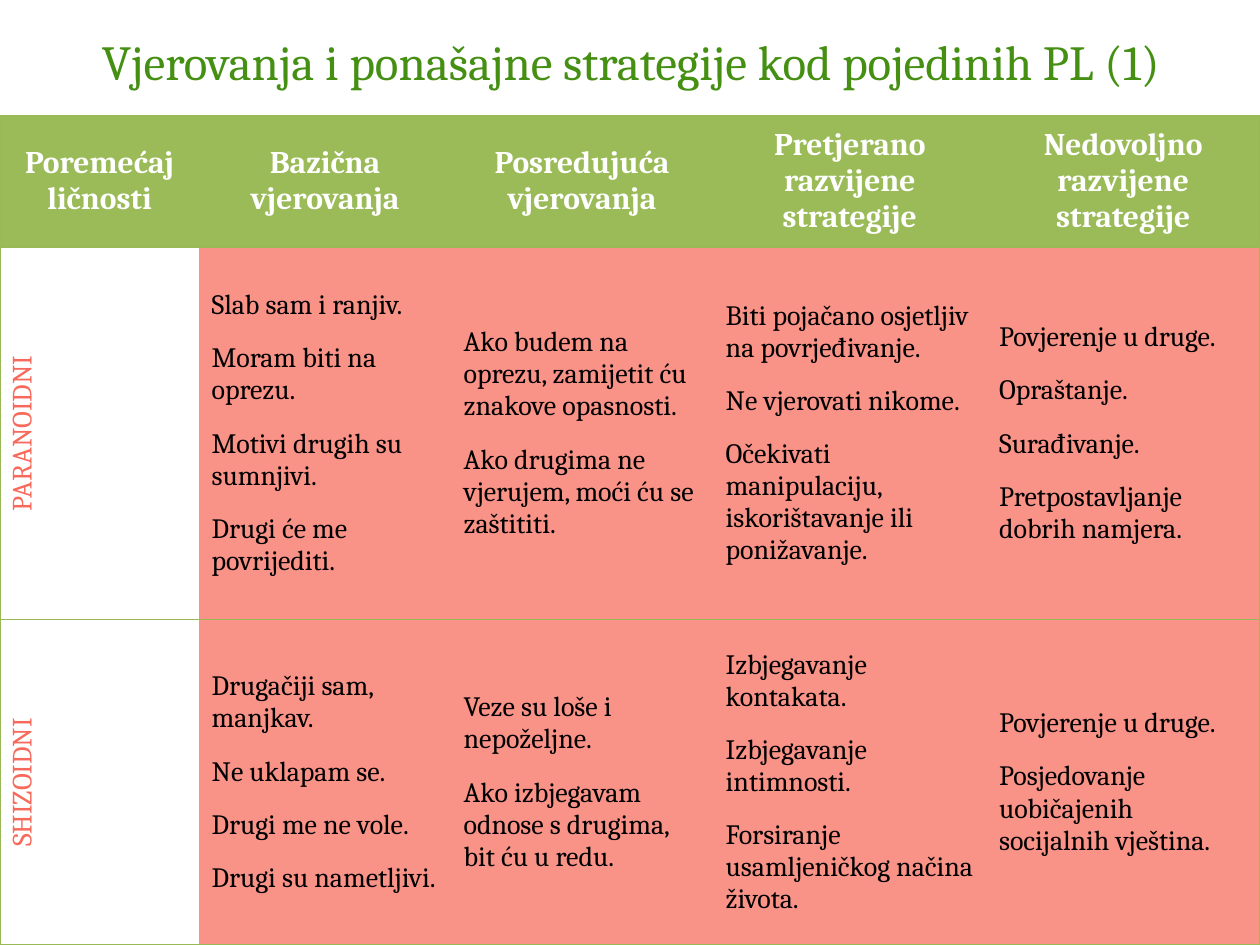
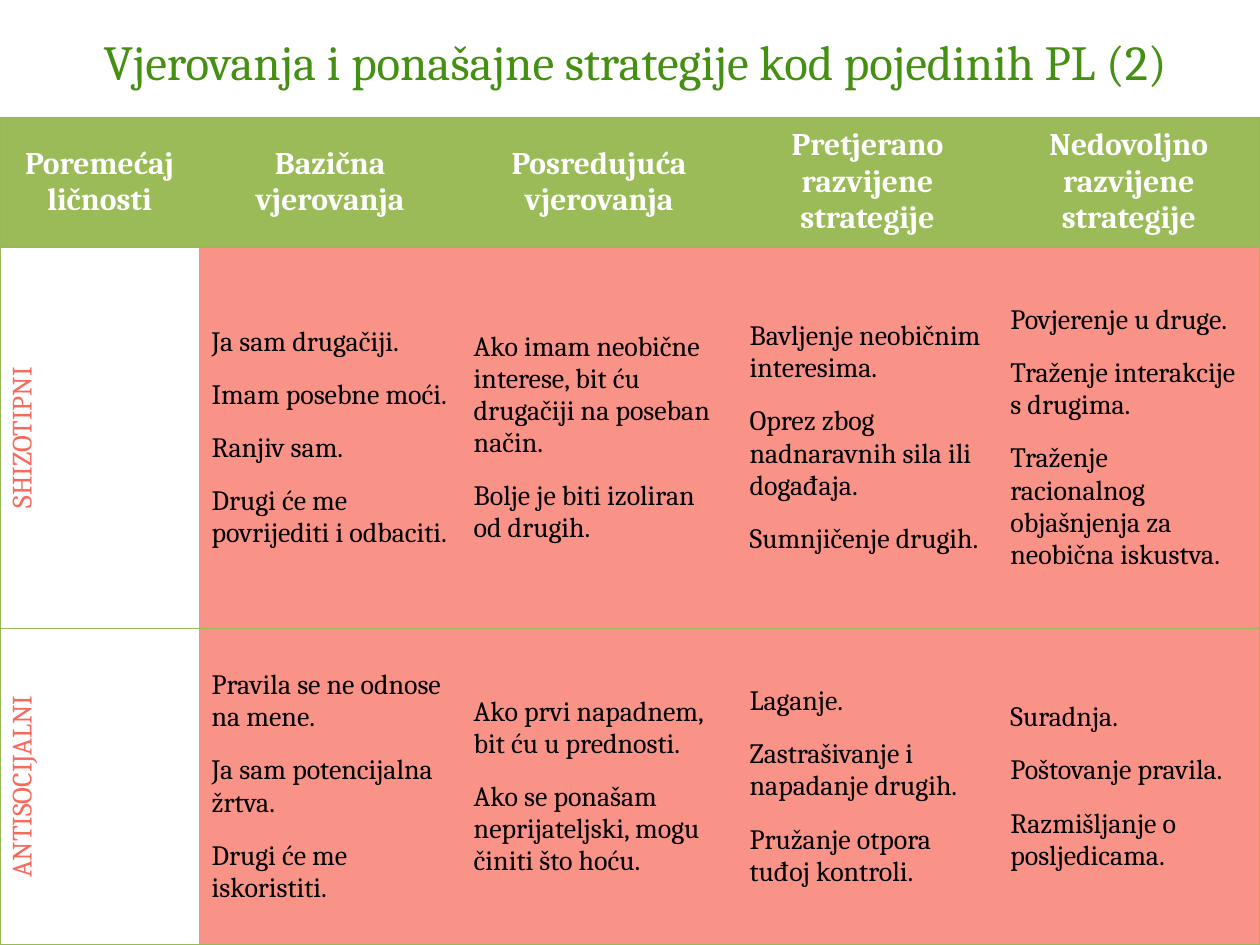
from lxml.etree import SubElement
from pptx import Presentation
from pptx.dml.color import RGBColor
from pptx.enum.text import MSO_ANCHOR, PP_ALIGN
from pptx.oxml.ns import qn
from pptx.util import Inches, Pt

COLORS = {
    "title": "458F13",
    "header": "9BBB59",
    "header text": "FFFFFF",
    "border": "98B955",
    "disorder": "F76A5B",
    "body": "F99287",
    "body text": "000000",
}
FONT = "Cambria"
TITLE = "Vjerovanja i ponašajne strategije kod pojedinih PL ({})"
HEADERS = [
    "Poremećaj ličnosti",
    "Bazična vjerovanja",
    "Posredujuća vjerovanja",
    "Pretjerano razvijene strategije",
    "Nedovoljno razvijene strategije",
]

SLIDES = [
    {
        "title left": 0.17,
        "title width": 9.67,
        "columns": [1.58, 2, 2.08, 2.17, 2.17],
        "rows": [1.04, 2.96, 2.58],
        "disorders": {
            "PARANOIDNI": [
                ["Slab sam i ranjiv.", "Moram biti na oprezu.",
                 "Motivi drugih su sumnjivi.", "Drugi će me povrijediti."],
                ["Ako budem na oprezu, zamijetit ću znakove opasnosti.",
                 "Ako drugima ne vjerujem, moći ću se zaštititi."],
                ["Biti pojačano osjetljiv na povrjeđivanje.", "Ne vjerovati nikome.",
                 "Očekivati manipulaciju, iskorištavanje ili ponižavanje."],
                ["Povjerenje u druge.", "Opraštanje.", "Surađivanje.",
                 "Pretpostavljanje dobrih namjera."],
            ],
            "SHIZOIDNI": [
                ["Drugačiji sam, manjkav.", "Ne uklapam se.",
                 "Drugi me ne vole.", "Drugi su nametljivi."],
                ["Veze su loše i nepoželjne.",
                 "Ako izbjegavam odnose s drugima, bit ću u redu."],
                ["Izbjegavanje kontakata.", "Izbjegavanje intimnosti.",
                 "Forsiranje usamljeničkog načina života."],
                ["Povjerenje u druge.",
                 "Posjedovanje uobičajenih socijalnih vještina."],
            ],
        },
    },
    {
        "title left": 0.25,
        "title width": 9.58,
        "columns": [1.58, 2.08, 2.19, 2.07, 2.08],
        "rows": [1.03, 3.03, 2.51],
        "disorders": {
            "SHIZOTIPNI": [
                ["Ja sam drugačiji.", "Imam posebne moći.", "Ranjiv sam.",
                 "Drugi će me povrijediti i odbaciti."],
                ["Ako imam neobične interese, bit ću drugačiji na poseban način.",
                 "Bolje je biti izoliran od drugih."],
                ["Bavljenje neobičnim interesima.",
                 "Oprez zbog nadnaravnih sila ili događaja.", "Sumnjičenje drugih."],
                ["Povjerenje u druge.", "Traženje interakcije s drugima.",
                 "Traženje racionalnog objašnjenja za neobična iskustva."],
            ],
            "ANTISOCIJALNI": [
                ["Pravila se ne odnose na mene.", "Ja sam potencijalna žrtva.",
                 "Drugi će me iskoristiti."],
                ["Ako prvi napadnem, bit ću u prednosti.",
                 "Ako se ponašam neprijateljski, mogu činiti što hoću."],
                ["Laganje.", "Zastrašivanje i napadanje drugih.",
                 "Pružanje otpora tuđoj kontroli."],
                ["Suradnja.", "Poštovanje pravila.", "Razmišljanje o posljedicama."],
            ],
        },
    },
]


def write_text(frame, lines, color, size=16, bold=False,
               align=PP_ALIGN.LEFT, space_before=0):
    frame.word_wrap = True
    for index, line in enumerate(lines):
        paragraph = frame.paragraphs[0] if index == 0 else frame.add_paragraph()
        paragraph.alignment = align
        paragraph.space_before = Pt(space_before if index else 0)
        run = paragraph.add_run()
        run.text = line
        run.font.name = FONT
        run.font.size = Pt(size)
        run.font.bold = bold
        run.font.color.rgb = RGBColor.from_string(COLORS[color])


def set_borders(cell, visible_sides):
    """Draw the given sides (of L, R, T, B) and clear the others."""
    properties = cell._tc.get_or_add_tcPr()
    for side in "LRTB":
        line = SubElement(properties, qn(f"a:ln{side}"), w=str(Pt(0.75)))
        if side in visible_sides:
            fill = SubElement(line, qn("a:solidFill"))
            SubElement(fill, qn("a:srgbClr"), val=COLORS["border"])
        else:
            SubElement(line, qn("a:noFill"))


def set_fill(cell, color):
    cell.fill.solid()
    cell.fill.fore_color.rgb = RGBColor.from_string(COLORS[color])


def fill_cell(cell, row, column, content):
    cell.vertical_anchor = MSO_ANCHOR.MIDDLE
    left = "L" if column == 0 else ""
    right = "R" if column == len(HEADERS) - 1 else ""
    set_borders(cell, "TB" + left + right)
    if row == 0:
        set_fill(cell, "header")
        write_text(cell.text_frame, [content], "header text", size=18,
                   bold=True, align=PP_ALIGN.CENTER)
    elif column == 0:
        cell.fill.background()
        cell._tc.get_or_add_tcPr().set("vert", "vert270")
        write_text(cell.text_frame, [content], "disorder", align=PP_ALIGN.CENTER)
    else:
        set_fill(cell, "body")
        write_text(cell.text_frame, content, "body text", space_before=12)


def add_strategy_table(slide, data):
    contents = [HEADERS] + [[name, *cells] for name, cells in data["disorders"].items()]
    height = sum(data["rows"])
    table = slide.shapes.add_table(
        len(contents), len(HEADERS), Inches(0), Inches(7.5 - height),
        Inches(10), Inches(height)).table
    table.horz_banding = False
    for column, width in zip(table.columns, data["columns"]):
        column.width = Inches(width)
    for row, row_height in zip(table.rows, data["rows"]):
        row.height = Inches(row_height)
    for row, row_contents in enumerate(contents):
        for column, content in enumerate(row_contents):
            fill_cell(table.cell(row, column), row, column, content)


def add_title(slide, text, left, width):
    title = slide.shapes.title
    title.left, title.top = Inches(left), Inches(0.17)
    title.width, title.height = Inches(width), Inches(0.62)
    title.text_frame.vertical_anchor = MSO_ANCHOR.MIDDLE
    write_text(title.text_frame, [text], "title", size=28, align=PP_ALIGN.CENTER)


def main():
    presentation = Presentation()
    presentation.slide_width, presentation.slide_height = Inches(10), Inches(7.5)
    for number, data in enumerate(SLIDES, start=1):
        slide = presentation.slides.add_slide(presentation.slide_layouts[5])
        add_title(slide, TITLE.format(number), data["title left"], data["title width"])
        add_strategy_table(slide, data)
    presentation.save("out.pptx")


if __name__ == "__main__":
    main()
